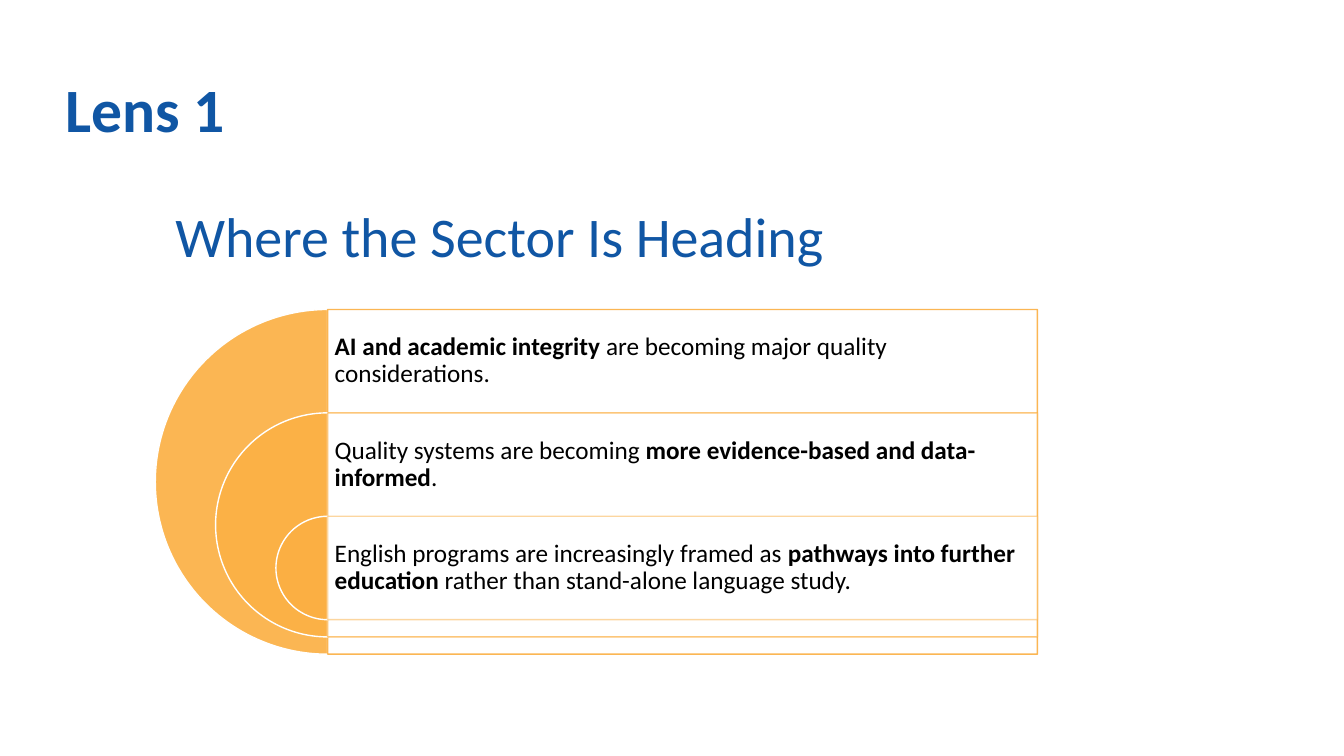
import pptx
import pptx.dml.color
import pptx.enum.shapes
import pptx.enum.text
import pptx.oxml
import pptx.oxml.ns
import pptx.util

SLIDE_WIDTH, SLIDE_HEIGHT = 13.33, 7.5
FONT = "Calibri"
BLUE, ORANGE, WHITE, BLACK = "1056A4", "FBAF41", "FFFFFF", "000000"

# Each run is (text, bold)
TITLE = [("Lens 1", True)]
SUBTITLE = [("Where the Sector Is Heading", False)]
TRENDS = [
    [("AI and academic integrity", True),
     (" are becoming major quality considerations.", False)],
    [("Quality systems are becoming ", False),
     ("more evidence-based and data-informed", True),
     (".", False)],
    [("English programs are increasingly framed as ", False),
     ("pathways into further education", True),
     (" rather than stand-alone language study.", False)],
]
OPACITIES = [90, 70, 50]
PANEL_OPACITY = 90

# The half discs share a vertical diameter, which is the left edge of the panels
AXIS, DIAGRAM_TOP, PANEL_WIDTH = 3.25, 3.07, 7.04
OUTER_DIAMETER = 3.42
SHRINK = 0.35
ROW = OUTER_DIAMETER * (1 - SHRINK * (len(TRENDS) - 1))

Inches = pptx.util.Inches
MIDDLE = pptx.enum.text.MSO_ANCHOR.MIDDLE
SHAPES = pptx.enum.shapes.MSO_SHAPE


def rgb(color):
    return pptx.dml.color.RGBColor.from_string(color)


def paint(fill, color, opacity):
    """Fill with a solid colour at an opacity in percent."""
    fill.solid()
    fill.fore_color.rgb = rgb(color)
    if opacity < 100:
        alpha = pptx.oxml.parse_xml(
            f'<a:alpha {pptx.oxml.ns.nsdecls("a")} val="{opacity * 1000}"/>')
        fill._xPr.find(".//" + pptx.oxml.ns.qn("a:srgbClr")).append(alpha)


def add_outlined(slide, preset, box, fill, line):
    """Add a shape; fill and line are (colour, opacity) pairs."""
    shape = slide.shapes.add_shape(preset, *map(Inches, box))
    shape.shadow.inherit = False
    paint(shape.fill, *fill)
    shape.line.width = pptx.util.Pt(1)
    paint(shape.line.fill, *line)
    return shape


def add_text(slide, box, runs, size, color, anchor=None, inset=None, spacing=None):
    frame = slide.shapes.add_textbox(*map(Inches, box)).text_frame
    frame.word_wrap = True
    if anchor is not None:
        frame.vertical_anchor = anchor
    if inset is not None:
        frame.margin_left = frame.margin_right = Inches(inset)
        frame.margin_top = frame.margin_bottom = Inches(inset)
    paragraph = frame.paragraphs[0]
    if spacing is not None:
        paragraph.line_spacing = spacing
    for text, bold in runs:
        run = paragraph.add_run()
        run.text = text
        run.font.name = FONT
        run.font.size = pptx.util.Pt(size)
        run.font.bold = bold
        run.font.color.rgb = rgb(color)


def add_trend(slide, level, runs, opacity):
    diameter = OUTER_DIAMETER * (1 - SHRINK * level)
    top = DIAGRAM_TOP + ROW * level
    half_disc = add_outlined(
        slide, SHAPES.PIE, (AXIS - diameter / 2, top, diameter, diameter),
        (ORANGE, opacity), (WHITE, 100))
    # Angles in units of 100000 sixty-thousandths of a degree: 90 to 270 degrees
    half_disc.adjustments[0] = 54
    half_disc.adjustments[1] = 162
    add_outlined(slide, SHAPES.RECTANGLE, (AXIS, top, PANEL_WIDTH, diameter),
                 (WHITE, PANEL_OPACITY), (ORANGE, opacity))
    add_text(slide, (AXIS, top, PANEL_WIDTH, ROW), runs, 18, BLACK,
             anchor=MIDDLE, inset=0.07, spacing=0.9)


def main():
    deck = pptx.Presentation()
    deck.slide_width = Inches(SLIDE_WIDTH)
    deck.slide_height = Inches(SLIDE_HEIGHT)
    slide = deck.slides.add_slide(deck.slide_layouts[6])

    add_text(slide, (0.55, 0.38, 10.18, 1.47), TITLE, 44, BLUE,
             anchor=MIDDLE, spacing=0.9)
    for level, (runs, opacity) in enumerate(zip(TRENDS, OPACITIES)):
        add_trend(slide, level, runs, opacity)
    add_text(slide, (1.64, 1.95, 9.09, 0.77), SUBTITLE, 40, BLUE)
    deck.save("out.pptx")


if __name__ == "__main__":
    main()
